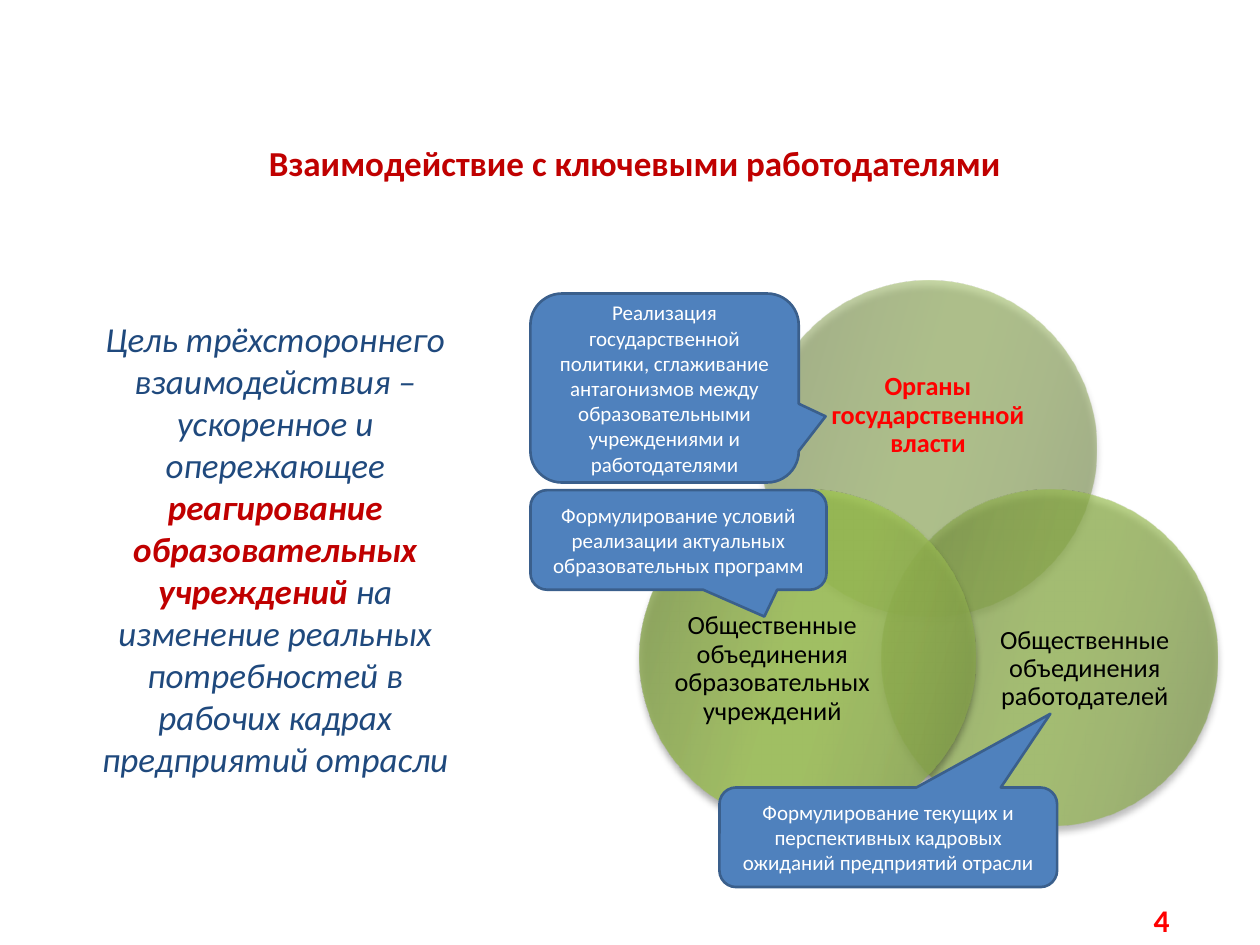
import pptx
import pptx.dml.color
import pptx.enum.shapes
import pptx.enum.text
import pptx.oxml
import pptx.oxml.ns
import pptx.util
from pptx.util import Inches

NAMESPACE = pptx.oxml.ns.nsdecls("a")
STOP_POSITIONS = (0, 30, 45, 55, 73, 100)
DARK_RED = "C00000"
RED = "FF0000"
NAVY = "1F497D"


def rgb(value):
    return pptx.dml.color.RGBColor.from_string(value)


def place(shape, left, top, width, height):
    shape.left, shape.top = Inches(left), Inches(top)
    shape.width, shape.height = Inches(width), Inches(height)


def write(shape, runs, size, italic=False, middle=False, inset=None, spacing=None):
    frame = shape.text_frame
    frame.word_wrap = True
    frame.auto_size = pptx.enum.text.MSO_AUTO_SIZE.NONE
    anchors = pptx.enum.text.MSO_ANCHOR
    frame.vertical_anchor = anchors.MIDDLE if middle else anchors.TOP
    if inset is not None:
        frame.margin_left = frame.margin_right = Inches(inset)
        frame.margin_top = frame.margin_bottom = Inches(inset)
    paragraph = frame.paragraphs[0]
    paragraph.alignment = pptx.enum.text.PP_ALIGN.CENTER
    if spacing:
        paragraph.line_spacing = spacing
    for text, color, bold in runs:
        run = paragraph.add_run()
        run.text = text
        run.font.name = "Calibri"
        run.font.size = pptx.util.Pt(size)
        run.font.bold = bold
        run.font.italic = italic
        run.font.color.rgb = rgb(color)


def add_text(slide, box, runs, size, **options):
    shape = slide.shapes.add_textbox(*map(Inches, box))
    write(shape, runs, size, **options)


def add_circle(slide, left, top, colors, opacity):
    diameter = Inches(2.66)
    shape = slide.shapes.add_shape(
        pptx.enum.shapes.MSO_SHAPE.OVAL, Inches(left), Inches(top), diameter, diameter
    )
    stops = "".join(
        f'<a:gs pos="{position * 1000}"><a:srgbClr val="{color}">'
        f'<a:alpha val="{opacity * 1000}"/></a:srgbClr></a:gs>'
        for position, color in zip(STOP_POSITIONS, colors + colors[::-1])
    )
    properties = shape.element.spPr
    properties.append(pptx.oxml.parse_xml(
        f'<a:gradFill {NAMESPACE} rotWithShape="1"><a:gsLst>{stops}</a:gsLst>'
        '<a:lin ang="960000" scaled="0"/></a:gradFill>'
    ))
    shape.line.fill.background()
    properties.append(pptx.oxml.parse_xml(
        f'<a:effectLst {NAMESPACE}><a:outerShdw blurRad="50800" dist="43000" '
        'dir="5400000" rotWithShape="0"><a:srgbClr val="000000">'
        '<a:alpha val="40000"/></a:srgbClr></a:outerShdw></a:effectLst>'
    ))


def add_callout(slide, box, pointer, text):
    shape = slide.shapes.add_shape(
        pptx.enum.shapes.MSO_SHAPE.ROUNDED_RECTANGULAR_CALLOUT, *map(Inches, box)
    )
    shape.adjustments[0], shape.adjustments[1] = pointer
    shape.shadow.inherit = False
    shape.fill.solid()
    shape.fill.fore_color.rgb = rgb("4F81BD")
    shape.line.color.rgb = rgb("3A5F8C")
    shape.line.width = pptx.util.Pt(1.5)
    write(shape, [(text, "FFFFFF", False)], 12, middle=True)


def main():
    presentation = pptx.Presentation()
    presentation.slide_width = Inches(10)
    presentation.slide_height = Inches(7.5)
    slide = presentation.slides.add_slide(presentation.slide_layouts[5])

    title = slide.shapes.title
    place(title, 0.59, 1.07, 8.9, 0.44)
    write(title, [("Взаимодействие с ключевыми работодателями", DARK_RED, True)], 20)

    venn = [
        (6.04, 2.23, ["738B42", "88A649", "8FB249"], 50, (6.39, 2.7, 1.95, 1.2),
         ("Органы государственной власти", RED, True)),
        (7, 3.89, ["799345", "8FB04C", "97BC4C"], 65, (7.81, 4.58, 1.6, 1.46),
         ("Общественные объединения работодателей", "000000", False)),
        (5.08, 3.89, ["7F994A", "96B752", "9FC452"], 80, (5.33, 4.58, 1.6, 1.46),
         ("Общественные объединения образовательных учреждений", "000000", False)),
    ]
    for left, top, colors, opacity, label_box, label in venn:
        add_circle(slide, left, top, colors, opacity)
        add_text(slide, label_box, [label], 15, middle=True, inset=0, spacing=0.9)

    goal = [
        ("Цель трёхстороннего взаимодействия – ускоренное и опережающее ", NAVY, False),
        ("реагирование образовательных учреждений ", DARK_RED, True),
        ("на изменение реальных потребностей в рабочих кадрах предприятий отрасли",
         NAVY, False),
    ]
    add_text(slide, (0.57, 2.47, 3.23, 3.8), goal, 20, italic=True)

    callouts = [
        ((4.21, 2.33, 2.13, 1.5), (0.6, 0.15),
         "Реализация государственной политики, сглаживание антагонизмов между "
         "образовательными учреждениями и работодателями"),
        ((4.21, 3.89, 2.35, 0.79), (0.29, 0.77),
         "Формулирование условий реализации актуальных образовательных программ"),
        ((5.71, 6.25, 2.68, 0.79), (0.48, -1.24),
         "Формулирование текущих и перспективных кадровых ожиданий предприятий отрасли"),
    ]
    for box, pointer, text in callouts:
        add_callout(slide, box, pointer, text)

    add_text(slide, (8.9, 7.1, 0.64, 0.4), [("4", RED, True)], 18)
    presentation.save("out.pptx")


if __name__ == "__main__":
    main()
